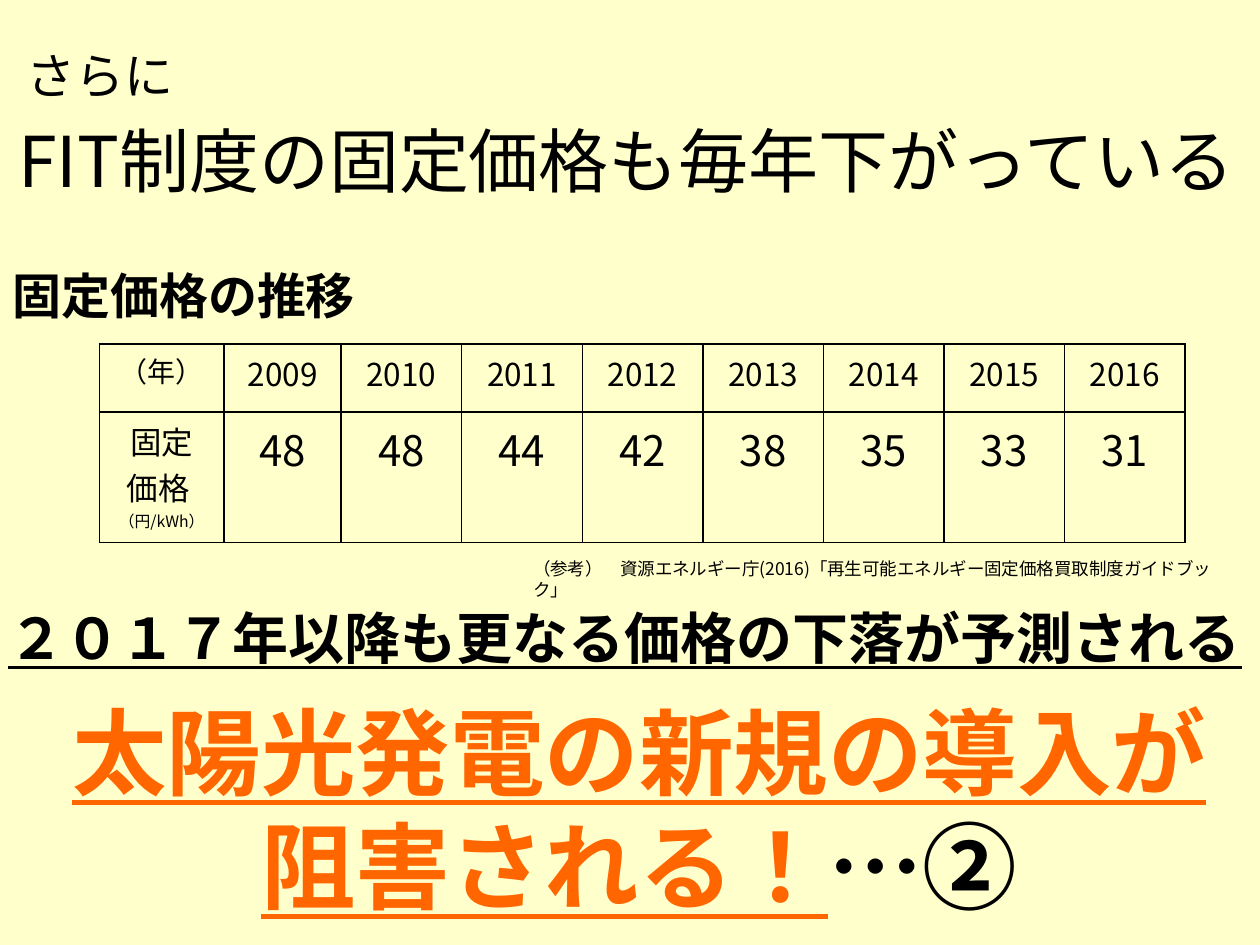
from lxml import etree
from pptx import Presentation
from pptx.dml.color import RGBColor
from pptx.enum.lang import MSO_LANGUAGE_ID
from pptx.enum.shapes import MSO_SHAPE
from pptx.enum.text import MSO_ANCHOR, PP_ALIGN
from pptx.oxml.ns import qn
from pptx.util import Pt

LEFT, MID = PP_ALIGN.LEFT, PP_ALIGN.CENTER
CENTER = MSO_ANCHOR.MIDDLE
RECT = MSO_SHAPE.RECTANGLE
FONT = "Noto Sans CJK JP"
BASE = {"name": FONT, "language_id": MSO_LANGUAGE_ID.JAPANESE}
HUES = {"paper": "FFFFCC", "ink": "000000", "alert": "FF6600"}

YEARS = range(2009, 2017)
PRICES = [48, 48, 44, 42, 38, 35, 33, 31]


def hue(key):
    return RGBColor.from_string(HUES[key])


def add_run(para, text, size, color="ink", **form):
    """Add one run, with the font set for Latin and Japanese text."""
    run = para.add_run()
    run.text = text
    run.font.color.rgb = hue(color)
    for key, value in {**BASE, "size": Pt(size), **form}.items():
        setattr(run.font, key, value)
    latin = run.font._element.find(qn("a:latin"))
    east = etree.Element(qn("a:ea"), typeface=FONT)
    latin.addnext(east)


def fill_text(frame, lines, align):
    """Write lines; each line is a list of (text, size, format) runs."""
    for i, line in enumerate(lines):
        para = frame.paragraphs[0] if i == 0 else frame.add_paragraph()
        para.alignment = align
        for text, size, form in line:
            add_run(para, text, size, **form)


def add_text(slide, box, lines, align=LEFT, wrap=True):
    frame = slide.shapes.add_textbox(*map(Pt, box)).text_frame
    frame.word_wrap = wrap
    fill_text(frame, lines, align)


def add_head(slide, box):
    """Lead-in word above the title."""
    x, y, w, h = box
    title = "FIT制度の固定価格も毎年下がっている"
    add_text(slide, (x, y + 41.2, w, h - 41.2), [[(title, 40, {})]], MID)
    add_text(slide, (x + 8, y, 113, 41), [[("さらに", 28, {})]])


def add_label(slide, box):
    """Filled heading of the price table."""
    shape = slide.shapes.add_shape(RECT, *map(Pt, box))
    shape.shadow.inherit = False
    shape.fill.solid()
    shape.fill.fore_color.rgb = hue("paper")
    shape.line.fill.background()
    frame = shape.text_frame
    frame.word_wrap = False
    frame.vertical_anchor = CENTER
    fill_text(frame, [[("固定価格の推移", 28, {"bold": True})]], LEFT)


def style_cell(cell):
    cell.fill.background()
    props = cell._tc.get_or_add_tcPr()
    for i, side in enumerate(("lnL", "lnR", "lnT", "lnB")):
        line = etree.Element(qn(f"a:{side}"), w=str(Pt(1)))
        fill = etree.SubElement(line, qn("a:solidFill"))
        etree.SubElement(fill, qn("a:srgbClr"), val=HUES["ink"])
        props.insert(i, line)


def add_prices(slide, box):
    """Price table with its heading and source note."""
    x, y, w, h = box
    add_label(slide, (x, y, 215.3, 68))

    widths = [71.2, 67] + [68.9] * 7
    heights = [38.7, 74.7]
    place = (x + 56.8, y + 61.9, sum(widths), sum(heights))
    table = slide.shapes.add_table(2, len(widths), *map(Pt, place)).table
    for col, width in zip(table.columns, widths):
        col.width = Pt(width)
    for row, height in zip(table.rows, heights):
        row.height = Pt(height)

    label = [[("固定", 18, {})], [("価格\u00a0", 18, {})],
             [("（円/kWh）", 9, {})]]
    rows = [
        [[[("（年）", 16, {})]]] + [[[(str(n), 18, {})]] for n in YEARS],
        [label] + [[[(str(n), 24, {})]] for n in PRICES],
    ]
    for r, row in enumerate(rows):
        for c, lines in enumerate(row):
            cell = table.cell(r, c)
            style_cell(cell)
            fill_text(cell.text_frame, lines, MID)

    note = ("（参考）　資源エネルギー庁(2016)"
            "「再生可能エネルギー固定価格買取制度ガイドブック」")
    add_text(slide, (x + 297.5, y + h - 19.5, 405.5, 19.5),
             [[(note, 10, {})]])


def add_close(slide, box):
    """Forecast line and the large conclusion."""
    x, y, w, h = box
    strong = {"bold": True, "underline": True}
    alert = {**strong, "color": "alert"}
    add_text(slide, (x - 15.3, y + 51.8, w + 41, h - 51.8), [
        [("太陽光発電の新規の導入が", 54, alert)],
        [("阻害される！", 54, alert), ("…②", 54, {"bold": True})],
    ], MID)
    add_text(slide, (x - 5.8, y, w + 5.8, 46),
             [[("２０１７年以降も更なる価格の下落が予測される", 32, strong)]],
             MID, wrap=False)


def main():
    deck = Presentation()
    deck.slide_width, deck.slide_height = Pt(720), Pt(540)
    slide = deck.slides.add_slide(deck.slide_layouts[6])
    back = slide.background.fill
    back.solid()
    back.fore_color.rgb = hue("paper")

    add_head(slide, (0, 22.2, 716, 96.6))
    add_prices(slide, (0, 134.7, 720, 200.3))
    add_close(slide, (0, 341.3, 720, 190))
    deck.save("out.pptx")


if __name__ == "__main__":
    main()
